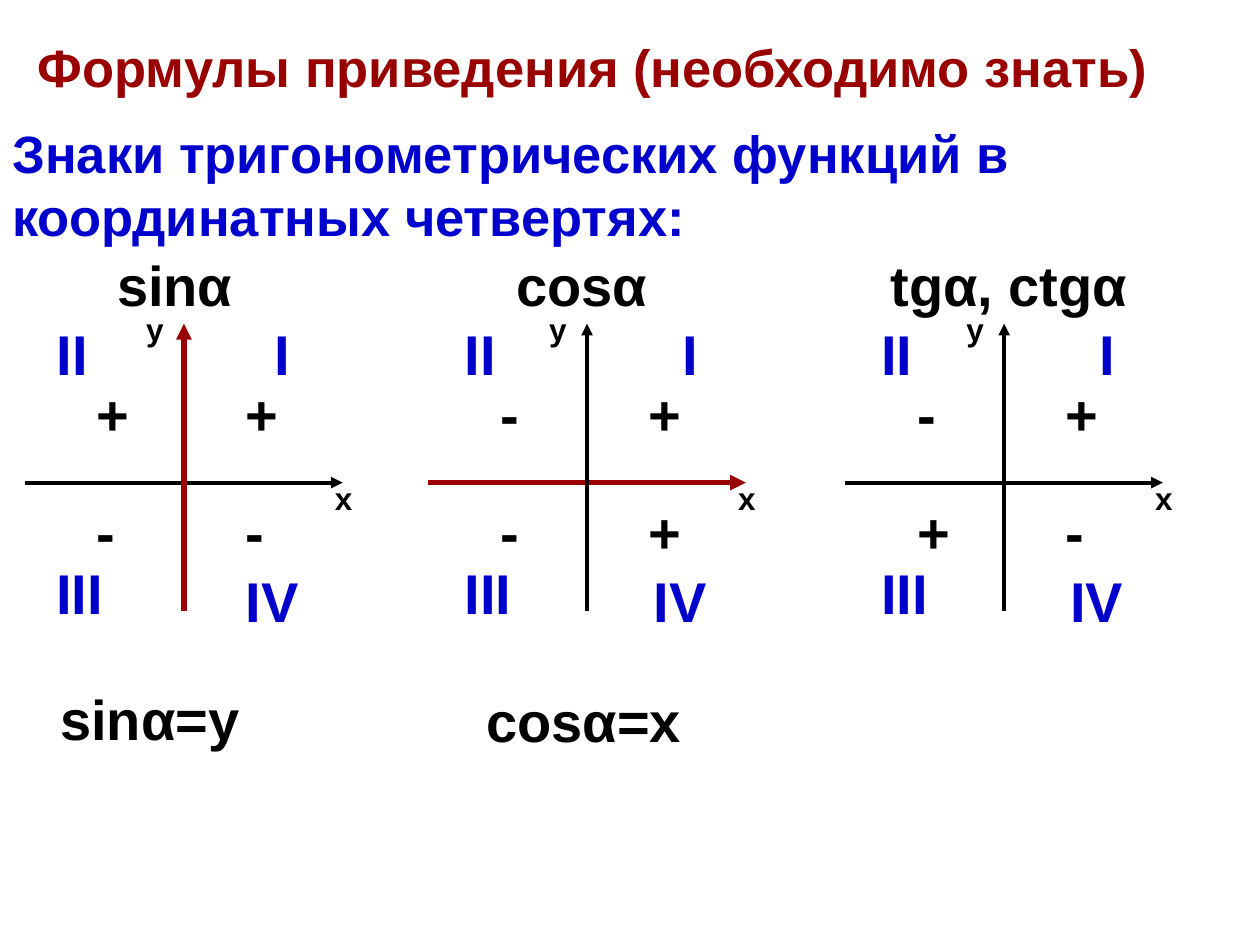
"""Build a slide on the signs of trigonometric functions by quadrant."""
import lxml.etree
import pptx
import pptx.dml.color
import pptx.enum.shapes
import pptx.enum.text
import pptx.oxml.ns
import pptx.util

Pt = pptx.util.Pt
qn = pptx.oxml.ns.qn
RGB = pptx.dml.color.RGBColor
RED = RGB(0x99, 0x00, 0x00)
BLUE = RGB(0x00, 0x00, 0xCC)
BLACK = RGB(0x00, 0x00, 0x00)
WHITE = RGB(0xFF, 0xFF, 0xFF)

TITLE = "Формулы приведения (необходимо знать)"
HEAD = "Знаки тригонометрических функций в координатных четвертях:"
GRAPHS = [
    dict(name="sinα", left=14.4, head=59.8, roman=14.4, signs="++--", main="y"),
    dict(name="cosα", left=244.8, head=288, roman=247.6, signs="+--+", main="x"),
    dict(name="tgα, ctgα", left=483.1, head=501.8, roman=485.8, signs="+-+-", main=""),
]
RULES = [("sinα=y", 27.4, 387.4), ("cosα=x", 270.7, 388.8)]
SPOTS = [(118.8, 213.1), (33.9, 213.1), (33.9, 280.8), (118.8, 280.8)]
ROMANS = [("I", 135.6, 179.3), ("II", 10.8, 179.3), ("III", 10.8, 315.4), ("IV", 118.8, 320.4)]
WIDTHS = {
    "sinα": 80.6, "cosα": 90, "tgα, ctgα": 150.5, "sinα=y": 117.4, "cosα=x": 126,
    "x": 24.5, "y": 24.5, "+": 33.1, "-": 25.2,
    "I": 23, "II": 32.4, "III": 41, "IV": 44.6,
}
SPAN, MID, TOP, BASE = 181.4, 275.8, 185, 349.2


def style(frame, text, size, color):
    frame.text = text
    para = frame.paragraphs[0]
    para.alignment = pptx.enum.text.PP_ALIGN.LEFT
    font = para.font
    font.name, font.size, font.bold = "Arial", Pt(size), True
    font.color.rgb = color


def label(slide, text, left, top, size=32, color=BLACK):
    high = 45.4 if size == 32 else 28.8
    box = slide.shapes.add_textbox(Pt(left), Pt(top), Pt(WIDTHS[text]), Pt(high))
    frame = box.text_frame
    frame.word_wrap = False
    frame.auto_size = pptx.enum.text.MSO_AUTO_SIZE.SHAPE_TO_FIT_TEXT
    style(frame, text, size, color)


def axis(slide, ends, main):
    kind = pptx.enum.shapes.MSO_CONNECTOR.STRAIGHT
    line = slide.shapes.add_connector(kind, *map(Pt, ends))
    line.line.color.rgb = RED if main else BLACK
    line.line.width = Pt(3 if main else 2.25)
    props = line.element.spPr
    lxml.etree.SubElement(props.find(qn("a:ln")), qn("a:tailEnd"), type="triangle")
    lxml.etree.SubElement(props, qn("a:effectLst"))


def graph(slide, data):
    left, main = data["left"], data["main"]
    mid = left + SPAN / 2
    axis(slide, (left, MID, left + SPAN, MID), main == "x")
    axis(slide, (mid, BASE, mid, TOP), main == "y")
    label(slide, data["name"], data["head"], 139.7)
    label(slide, "x", left + 169.9, 270, 18)
    label(slide, "y", left + 62, 173.5, 18)
    for sign, (x, y) in zip(data["signs"], SPOTS):
        label(slide, sign, left + x, y)
    for text, x, y in ROMANS:
        label(slide, text, data["roman"] + x, y, color=BLUE)


def heads(slide):
    title = slide.shapes.title
    title.left, title.top, title.width, title.height = map(Pt, (14.4, 9.4, 694.8, 56.9))
    kind = pptx.enum.shapes.MSO_SHAPE.RECTANGLE
    band = slide.shapes.add_shape(kind, 0, Pt(65.5), Pt(720), Pt(79.2))
    band.shadow.inherit = False
    band.fill.background()
    band.line.color.rgb = WHITE
    band.line.width = Pt(0.5)
    for shape, text, color in ((title, TITLE, RED), (band, HEAD, BLUE)):
        frame = shape.text_frame
        frame.word_wrap = True
        frame.auto_size = pptx.enum.text.MSO_AUTO_SIZE.NONE
        frame.vertical_anchor = pptx.enum.text.MSO_ANCHOR.MIDDLE
        style(frame, text, 30, color)


def main():
    deck = pptx.Presentation()
    deck.slide_width, deck.slide_height = Pt(720), Pt(540)
    slide = deck.slides.add_slide(deck.slide_layouts[5])
    heads(slide)
    for data in GRAPHS:
        graph(slide, data)
    for text, left, top in RULES:
        label(slide, text, left, top)
    deck.save("out.pptx")


if __name__ == "__main__":
    main()
